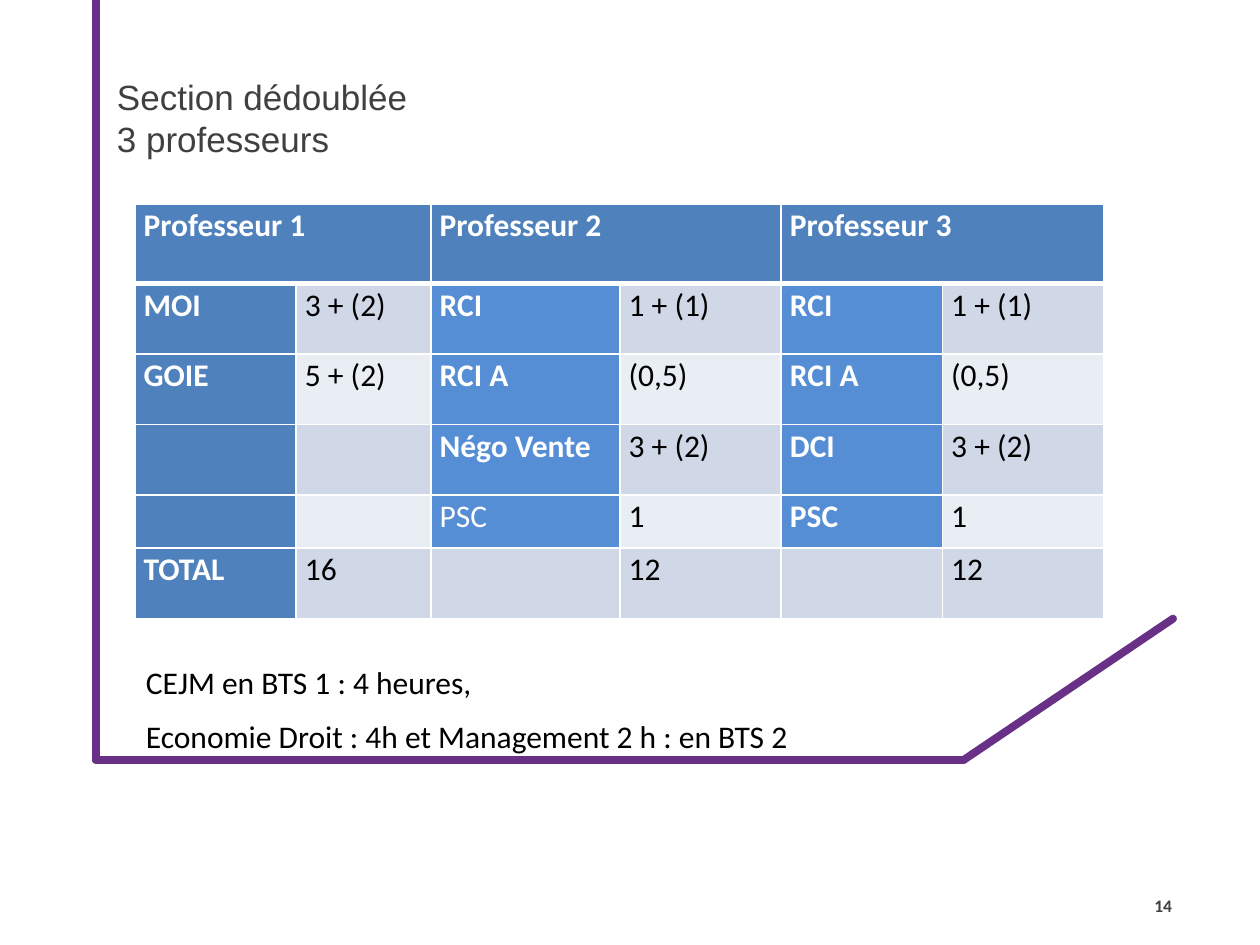
from itertools import pairwise

from lxml import etree
from pptx import Presentation
from pptx import util as u
from pptx.dml.color import RGBColor
from pptx.enum import shapes, text
from pptx.oxml import ns

COLORS = {
    "frame": "683086", "heading": "404040", "text": "000000", "white": "FFFFFF",
    "blue": "4F81BD", "bright_blue": "558ED5", "band_dark": "D0D8E8", "band_light": "E9EDF4",
}
FRAME_POINTS = [(0.76, 0), (0.76, 6.03), (7.65, 6.03), (9.31, 4.91)]
COLUMN_WIDTHS = [1.28, 1.07, 1.5, 1.28, 1.28, 1.28]
ROW_HEIGHTS = [0.63, 0.56, 0.56, 0.56, 0.42, 0.56]
ROWS = [
    ["Professeur 1", "", "Professeur 2", "", "Professeur 3", ""],
    ["MOI", "3 + (2)", "RCI", "1 + (1)", "RCI", "1 + (1)"],
    ["GOIE", "5 + (2)", "RCI A", "(0,5)", "RCI A", "(0,5)"],
    ["", "", "Négo Vente", "3 + (2)", "DCI", "3 + (2)"],
    ["", "", "PSC", "1", "PSC", "1"],
    ["TOTAL", "16", "", "12", "", "12"],
]
TOTAL_ROW = len(ROWS) - 1
PLAIN_LABEL = (4, 2)


def rgb(name):
    return RGBColor.from_string(COLORS[name])


def add_run(paragraph, words, size, color, bold=False, font="Calibri"):
    run = paragraph.add_run()
    run.text = words
    run.font.name = font
    run.font.size = u.Pt(size)
    run.font.bold = bold
    run.font.color.rgb = rgb(color)


def add_text_box(slide, left, top, width, height, anchor):
    box = slide.shapes.add_textbox(*map(u.Inches, (left, top, width, height)))
    frame = box.text_frame
    frame.word_wrap = True
    frame.vertical_anchor = anchor
    return frame


def add_frame_line(slide, start, end):
    line = slide.shapes.add_connector(
        shapes.MSO_CONNECTOR.STRAIGHT, *map(u.Inches, (*start, *end)))
    line.line.color.rgb = rgb("frame")
    line.line.width = u.Pt(4.5)
    line.line._get_or_add_ln().set("cap", "rnd")
    etree.SubElement(line._element.spPr, ns.qn("a:effectLst"))


def set_borders(cell, row):
    """Thin white borders, thicker between the header and the body."""
    properties = cell._tc.get_or_add_tcPr()
    widths = {"L": 1, "R": 1, "T": 3 if row == 1 else 1, "B": 3 if row == 0 else 1}
    for side, width in widths.items():
        border = etree.SubElement(properties, ns.qn(f"a:ln{side}"), w=str(u.Pt(width)))
        fill = etree.SubElement(border, ns.qn("a:solidFill"))
        etree.SubElement(fill, ns.qn("a:srgbClr"), val=COLORS["white"])


def cell_fill(row, column):
    if row == 0 or column == 0:
        return "blue"
    if column % 2 == 0 and row != TOTAL_ROW:
        return "bright_blue"
    return "band_dark" if row % 2 else "band_light"


def fill_cell(cell, row, column):
    cell.margin_left = cell.margin_right = u.Inches(0.07)
    cell.margin_top = cell.margin_bottom = 0
    set_borders(cell, row)
    cell.fill.solid()
    cell.fill.fore_color.rgb = rgb(cell_fill(row, column))
    words = ROWS[row][column]
    if words:
        paragraph = cell.text_frame.paragraphs[0]
        paragraph.line_spacing = 1.07
        is_label = column % 2 == 0
        add_run(paragraph, words, 18, "white" if is_label else "text",
                is_label and (row, column) != PLAIN_LABEL)


def add_hours_table(slide):
    table = slide.shapes.add_table(
        len(ROWS), len(COLUMN_WIDTHS), u.Inches(1.07), u.Inches(1.62),
        u.Inches(sum(COLUMN_WIDTHS)), u.Inches(sum(ROW_HEIGHTS))).table
    for column, width in zip(table.columns, COLUMN_WIDTHS):
        column.width = u.Inches(width)
    for row, height in zip(table.rows, ROW_HEIGHTS):
        row.height = u.Inches(height)
    for row in range(len(ROWS)):
        for column in range(len(COLUMN_WIDTHS)):
            fill_cell(table.cell(row, column), row, column)
    for column in range(0, len(COLUMN_WIDTHS), 2):
        table.cell(0, column).merge(table.cell(0, column + 1))


def add_title(slide):
    frame = add_text_box(slide, 0.83, 0.13, 8.5, 1.61, text.MSO_ANCHOR.MIDDLE)
    paragraph = frame.paragraphs[0]
    add_run(paragraph, "Section dédoublée", 20, "heading", font="Arial")
    paragraph.add_line_break()
    add_run(paragraph, "3 professeurs", 20, "heading", font="Arial")


def add_slide_number(slide):
    frame = add_text_box(slide, 8.96, 6.99, 0.44, 0.4, text.MSO_ANCHOR.MIDDLE)
    paragraph = frame.paragraphs[0]
    paragraph.alignment = text.PP_ALIGN.RIGHT
    add_run(paragraph, "14", 10, "heading", bold=True)


def add_notes_on_hours(slide):
    frame = add_text_box(slide, 1.06, 5.19, 6.54, 0.86, text.MSO_ANCHOR.TOP)
    lines = ["CEJM en BTS 1 : 4 heures,",
             "Economie Droit : 4h et Management 2 h : en BTS 2"]
    for index, words in enumerate(lines):
        paragraph = frame.add_paragraph() if index else frame.paragraphs[0]
        paragraph.line_spacing = 1.07
        paragraph.space_after = u.Pt(8)
        add_run(paragraph, words, 18, "text")


def main():
    presentation = Presentation()
    presentation.slide_width = u.Inches(10)
    presentation.slide_height = u.Inches(7.5)
    slide = presentation.slides.add_slide(presentation.slide_layouts[6])
    for start, end in pairwise(FRAME_POINTS):
        add_frame_line(slide, start, end)
    add_title(slide)
    add_slide_number(slide)
    add_hours_table(slide)
    add_notes_on_hours(slide)
    presentation.save("out.pptx")


if __name__ == "__main__":
    main()
